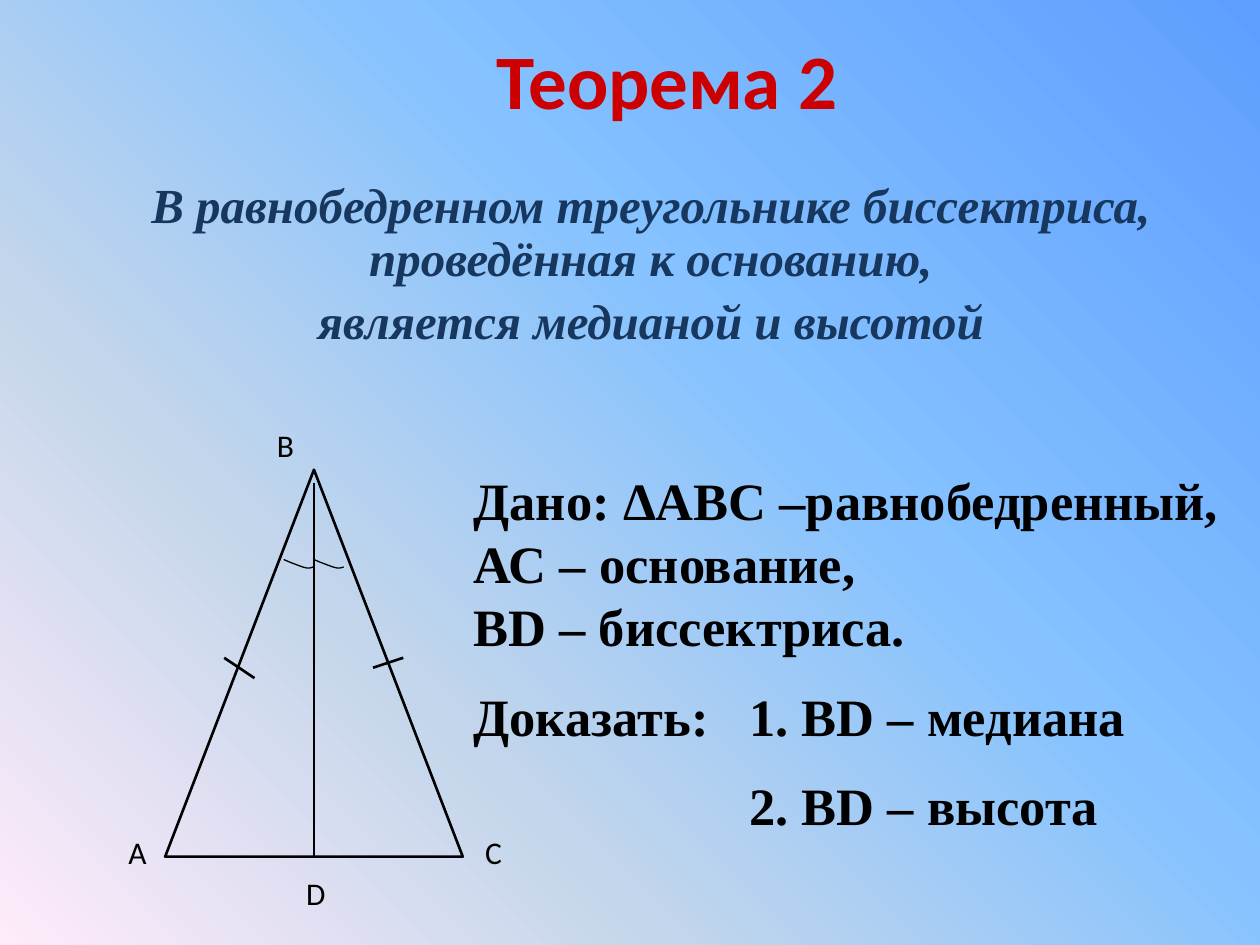
from lxml import etree
from pptx import Presentation
from pptx.dml.color import RGBColor
from pptx.enum.shapes import MSO_CONNECTOR, MSO_SHAPE
from pptx.enum.text import MSO_ANCHOR, MSO_AUTO_SIZE, PP_ALIGN
from pptx.oxml import parse_xml
from pptx.oxml.ns import nsdecls, qn
from pptx.util import Cm, Pt

STRAIGHT = MSO_CONNECTOR.STRAIGHT
TRIANGLE = MSO_SHAPE.ISOSCELES_TRIANGLE
MIDDLE = MSO_ANCHOR.MIDDLE
NO_FIT = MSO_AUTO_SIZE.NONE
GROW = MSO_AUTO_SIZE.SHAPE_TO_FIT_TEXT
CENTER = PP_ALIGN.CENTER

COLORS = {"title": "CC0000", "theorem": "17375E", "ink": "000000"}
BACKDROP = [(0, "5E9EFF"), (40, "85C2FF"), (70, "C4D6EB"), (100, "FFEBFA")]
HEAD, SERIF = "Calibri", "Times New Roman"


class Board:
    def __init__(self, prs):
        self.s = prs.slides.add_slide(prs.slide_layouts[1])

    def color(self, name):
        return RGBColor.from_string(COLORS[name])

    def backdrop(self, stops):
        fill = self.s.background.fill
        fill.solid()
        bg_pr = self.s.element.cSld.find(qn("p:bg")).find(qn("p:bgPr"))
        stop_xml = "".join(
            f'<a:gs pos="{pos * 1000}"><a:srgbClr val="{c}"/></a:gs>' for pos, c in stops
        )
        gradient = parse_xml(
            f'<a:gradFill {nsdecls("a")} rotWithShape="1"><a:gsLst>{stop_xml}</a:gsLst>'
            '<a:path path="circle"><a:fillToRect l="100000" b="100000"/></a:path></a:gradFill>'
        )
        bg_pr.replace(bg_pr.find(qn("a:solidFill")), gradient)

    def place(self, sp, left, top, width, height):
        sp.left, sp.top, sp.width, sp.height = map(Cm, (left, top, width, height))

    def set_text(self, tf, lines, size, font, color, bold=False, italic=False):
        tf.text = "\n".join(lines)
        for p in tf.paragraphs:
            for r in p.runs:
                r.font.size, r.font.name = Pt(size), font
                r.font.bold, r.font.italic = bold, italic
                r.font.color.rgb = self.color(color)
        return tf.paragraphs

    def title(self, text, box):
        sp = self.s.shapes.title
        self.place(sp, *box)
        tf = sp.text_frame
        tf.auto_size, tf.vertical_anchor = NO_FIT, MIDDLE
        self.set_text(tf, [text], 44, HEAD, "title", bold=True)[0].alignment = CENTER

    def theorem(self, lines, box):
        sp = self.s.placeholders[1]
        self.place(sp, *box)
        sp.text_frame.auto_size = NO_FIT
        for p in self.set_text(sp.text_frame, lines, 28, SERIF, "theorem", True, True):
            p.alignment, p.line_spacing, p.space_before = CENTER, 0.9, Pt(5.6)
            p_pr = p._p.get_or_add_pPr()
            p_pr.set("marL", "0")
            p_pr.set("indent", "0")
            etree.SubElement(p_pr, qn("a:buNone"))

    def statement(self, lines, box, tab):
        tf = self.s.shapes.add_textbox(*map(Cm, box)).text_frame
        tf.word_wrap, tf.auto_size = True, GROW
        for p in self.set_text(tf, lines, 30, SERIF, "ink", bold=True):
            if "\t" in p.text:
                p.space_before = Pt(15)
                tabs = etree.SubElement(p._p.get_or_add_pPr(), qn("a:tabLst"))
                etree.SubElement(tabs, qn("a:tab"), pos=str(int(Cm(tab))), algn="l")

    def label(self, text, left, top):
        tf = self.s.shapes.add_textbox(Cm(left), Cm(top), Cm(1.1), Cm(1.27)).text_frame
        tf.word_wrap, tf.auto_size = False, GROW
        self.set_text(tf, [text], 18, HEAD, "ink")

    def outline(self, sp, width):
        sp.line.color.rgb, sp.line.width = self.color("ink"), Pt(width)

    def triangle(self, box):
        sp = self.s.shapes.add_shape(TRIANGLE, *map(Cm, box))
        sp.shadow.inherit = False
        sp.fill.background()
        self.outline(sp, 1.5)

    def line(self, x1, y1, x2, y2, width):
        sp = self.s.shapes.add_connector(STRAIGHT, Cm(x1), Cm(y1), Cm(x2), Cm(y2))
        self.outline(sp, width)
        etree.SubElement(sp._element.spPr, qn("a:effectLst"))

    def arc(self, left, top, points):
        x0, y0 = points[0]
        builder = self.s.shapes.build_freeform(Cm(left + x0), Cm(top + y0))
        builder.add_line_segments([(Cm(left + x), Cm(top + y)) for x, y in points[1:]], close=False)
        sp = builder.convert_to_shape()
        sp.shadow.inherit = False
        sp.fill.background()
        self.outline(sp, 0.75)


def main():
    prs = Presentation()
    prs.slide_width, prs.slide_height = Cm(25.4), Cm(19.05)
    board = Board(prs)
    board.backdrop(BACKDROP)
    board.title("Теорема 2", (2.11, 0.53, 22.68, 2.11))
    board.theorem(
        ["В равнобедренном треугольнике биссектриса, проведённая к основанию,",
         "является медианой и высотой"],
        (0.84, 3.53, 24.56, 3.18),
    )
    board.statement(
        ["Дано: ΔАВС –равнобедренный,", "АС – основание,", "ВD – биссектриса.",
         "Доказать:\t1. ВD – медиана", "\t2. ВD – высота"],
        (9.3, 9.32, 16.1, 7.95),
        tab=5.56,
    )

    left, top, width, height = 3.33, 9.47, 6, 7.8
    axis, base = left + width / 2, top + height
    board.triangle((left, top, width, height))
    board.line(4.52, 13.26, 5.13, 13.67, 1.5)
    board.line(7.52, 13.46, 8.13, 13.26, 1.5)
    board.line(axis, 9.73, axis, base, 0.75)

    curve = [(0, 0), (0.14, 0.06), (0.27, 0.11), (0.38, 0.15), (0.46, 0.17), (0.53, 0.17), (0.6, 0.15)]
    for x in (axis - 0.61, axis):
        board.arc(x, 11.28, curve)

    for name, x, y in [("A", 2.34, 16.66), ("B", 5.33, 8.46), ("C", 9.53, 16.66), ("D", 5.92, 17.5)]:
        board.label(name, x, y)
    prs.save("out.pptx")


if __name__ == "__main__":
    main()
